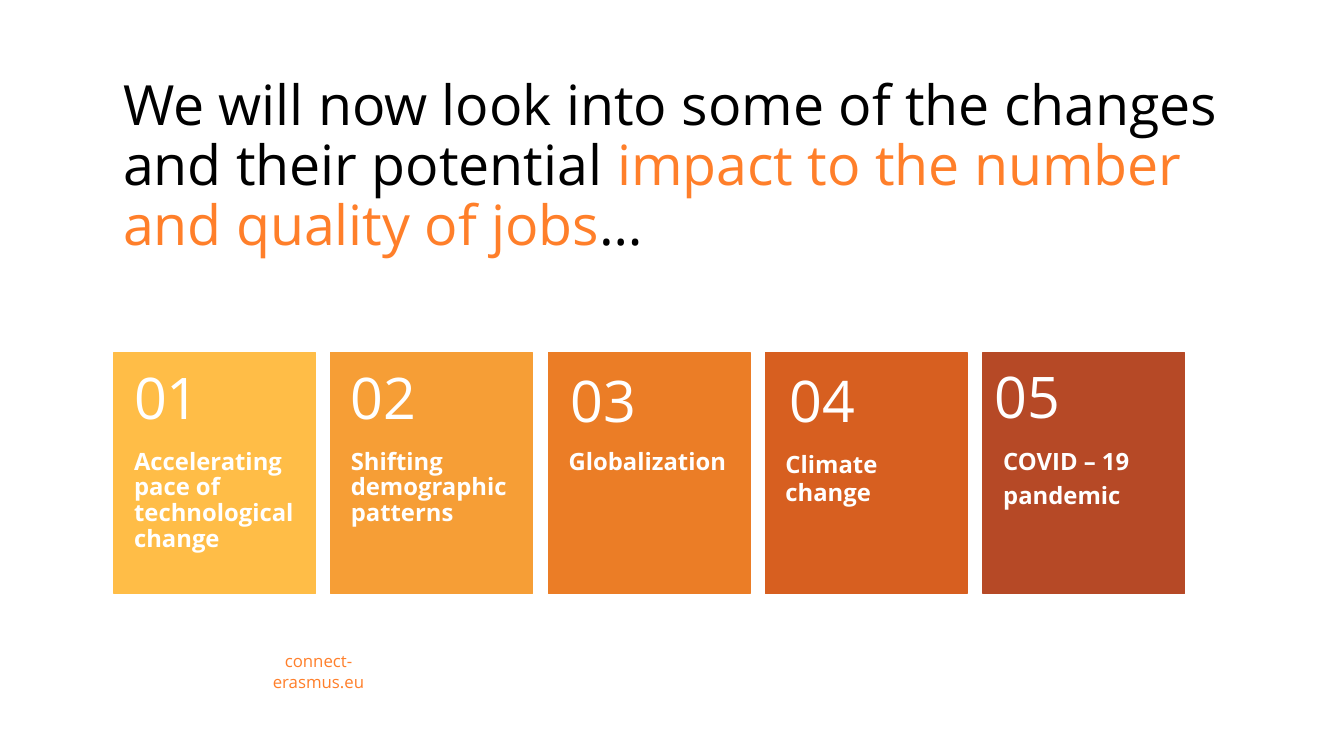
from pptx import Presentation
from pptx import util as u
from pptx.dml.color import RGBColor
from pptx.enum import shapes, text

PX = 9144
FONT = "Open Sans"
BLACK = RGBColor(0x00, 0x00, 0x00)
WHITE = RGBColor(0xFF, 0xFF, 0xFF)
ORANGE = RGBColor(0xFF, 0x7F, 0x2A)
AMBER = RGBColor(0xFF, 0xBD, 0x47)
HONEY = RGBColor(0xF6, 0x9E, 0x36)
CARROT = RGBColor(0xEB, 0x7D, 0x26)
RUST = RGBColor(0xD7, 0x5F, 0x20)
BRICK = RGBColor(0xB6, 0x49, 0x26)

TOP = text.MSO_ANCHOR.TOP
MID = text.MSO_ANCHOR.MIDDLE
LEFT = text.PP_ALIGN.LEFT
MID_PAD = (20, 18, 20, 18)
CARDS = [
    (AMBER, ["Accelerating pace of technological change"], 0.9,
     (0, 0, 200, 96), MID_PAD, MID, 0.9),
    (HONEY, ["Shifting demographic patterns"], 0.9,
     (0, 0, 200, 96), MID_PAD, MID, 0.9),
    (CARROT, ["Globalization"], 0.9,
     (2, 3, 200, 96), MID_PAD, MID, 0.9),
    (RUST, ["Climate change"], 1.0,
     (4, 3, 200, 96), MID_PAD, MID, 0.9),
    (BRICK, ["COVID – 19", "pandemic"], 0.9,
     (2, 3, 184, 79), (10, 5, 10, 5), TOP, 1.0),
]


def px(*nums):
    return [u.Emu(n * PX) for n in nums]


def style(par, size, color, bold=False, lead=1.0, align=LEFT):
    par.alignment = align
    par.line_spacing = lead
    font = par.font
    font.name, font.size, font.bold = FONT, u.Pt(size), bold
    font.color.rgb = color


def frame(shape, pad, anchor):
    tf = shape.text_frame
    tf.word_wrap = True
    tf.auto_size = text.MSO_AUTO_SIZE.NONE
    tf.vertical_anchor = anchor
    (tf.margin_left, tf.margin_top,
     tf.margin_right, tf.margin_bottom) = px(*pad)
    return tf


def label(slide, box, lines, pad, anchor, after=0, **look):
    tf = frame(slide.shapes.add_textbox(*px(*box)), pad, anchor)
    tf.text = "\n".join(lines)
    for par in tf.paragraphs:
        style(par, **look)
        par.space_after = u.Pt(after)


def heading(slide, box):
    title = slide.shapes.title
    title.left, title.top, title.width, title.height = px(*box)
    par = frame(title, (10, 5, 10, 5), text.MSO_ANCHOR.BOTTOM).paragraphs[0]
    style(par, 39.6, BLACK, lead=0.9)
    for words, color in [
        ("We will now look into some of the changes and their potential ",
         BLACK),
        ("impact to the number and quality of jobs", ORANGE),
        ("…", BLACK),
    ]:
        run = par.add_run()
        run.text = words
        run.font.color.rgb = color


def card(slide, box, num, data):
    fill, lines, lead, spot, pad, anchor, num_lead = data
    x, y, w, h = box
    tile = slide.shapes.add_shape(shapes.MSO_SHAPE.RECTANGLE, *px(*box))
    tile.shadow.inherit = False
    tile.fill.solid()
    tile.fill.fore_color.rgb = fill
    tile.line.color.rgb = fill
    tile.line.width = u.Pt(1)
    label(slide, (x, y + 96, w, h - 96), lines, (20, 0, 20, 36), TOP,
          after=6, size=17, color=WHITE, bold=True, lead=lead)
    dx, dy, nw, nh = spot
    label(slide, (x + dx, y + dy, nw, nh), [f"{num:02}"], pad, anchor,
          size=41, color=WHITE, lead=num_lead)


def cards(slide, box):
    x, y, w, h = box
    wide = 200
    span = w - wide
    for i, data in enumerate(CARDS):
        left = x + span * i // (len(CARDS) - 1)
        card(slide, (left, y, wide, h), i + 1, data)


def footer(slide, box):
    label(slide, box, ["connect-erasmus.eu"], (14, 5, 14, 5), MID,
          size=12, color=ORANGE, align=text.PP_ALIGN.CENTER)


def main():
    deck = Presentation()
    deck.slide_width, deck.slide_height = px(1333, 750)
    slide = deck.slides.add_slide(deck.slide_layouts[5])
    heading(slide, (112, 97, 1164, 163))
    cards(slide, (113, 350, 1062, 239))
    footer(slide, (228, 651, 176, 30))
    deck.save("out.pptx")


if __name__ == "__main__":
    main()
